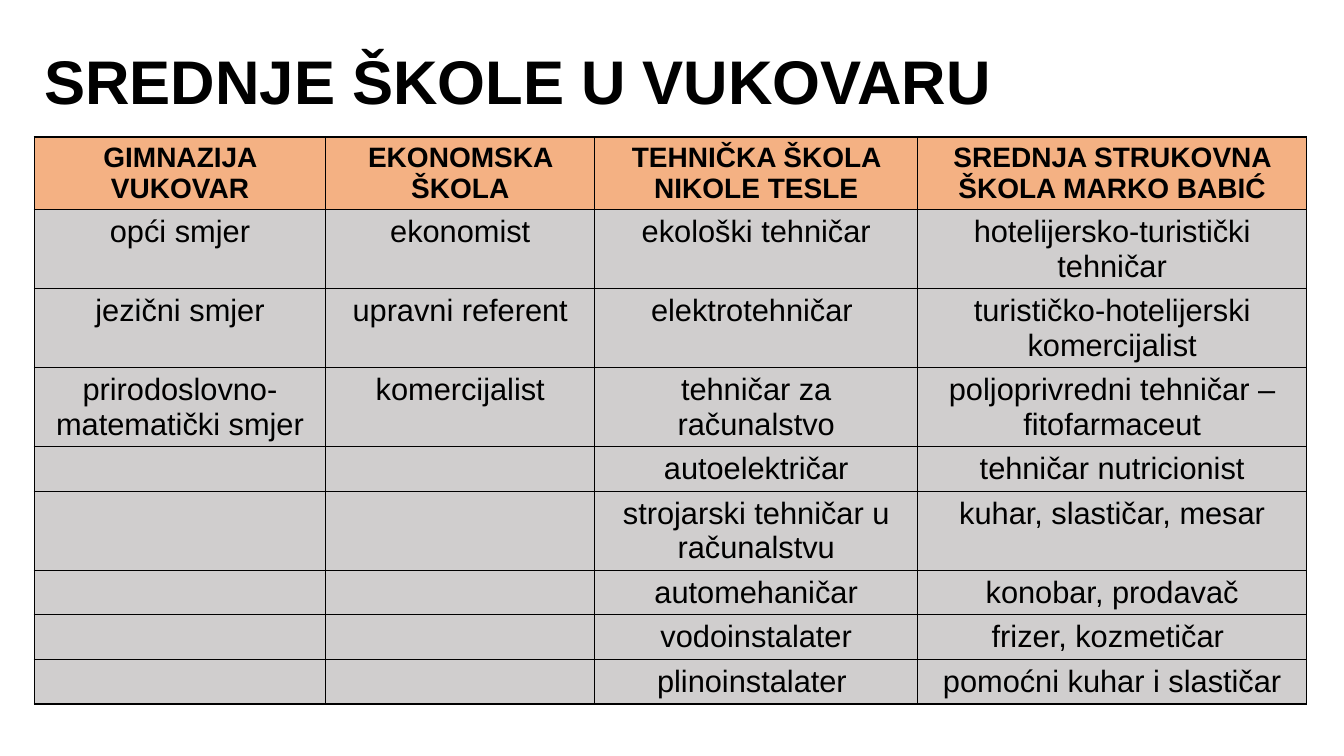
import pptx
import pptx.dml.color
import pptx.enum.text
import pptx.oxml
import pptx.oxml.ns
import pptx.util

PAGE_WIDTH = pptx.util.Inches(13.333)
PAGE_HEIGHT = pptx.util.Inches(7.5)
LEFT = 2.55
COLUMN_SHARES = [21.68, 20.03, 24.01, 28.96]
HEADER_SHARE, DOUBLE_SHARE, SINGLE_SHARE = 9.5, 10.4, 5.87
BLACK, ORANGE, GREY = "000000", "F4B183", "D0CECE"

SCHOOLS = {
    "GIMNAZIJA VUKOVAR": [
        "opći smjer", "jezični smjer", "prirodoslovno-matematički smjer"],
    "EKONOMSKA ŠKOLA": ["ekonomist", "upravni referent", "komercijalist"],
    "TEHNIČKA ŠKOLA NIKOLE TESLE": [
        "ekološki tehničar", "elektrotehničar ", "tehničar za računalstvo",
        "autoelektričar", "strojarski tehničar u računalstvu",
        "automehaničar", "vodoinstalater", "plinoinstalater "],
    "SREDNJA STRUKOVNA ŠKOLA MARKO BABIĆ": [
        "hotelijersko-turistički tehničar",
        "turističko-hotelijerski komercijalist",
        "poljoprivredni tehničar – fitofarmaceut",
        "tehničar nutricionist", "kuhar, slastičar, mesar",
        "konobar, prodavač", "frizer, kozmetičar ",
        "pomoćni kuhar i slastičar"],
}
DOUBLE_ROWS = {1, 2, 3, 5}


def across(percent):
    """Return a share of the page width."""
    return round(PAGE_WIDTH * percent / 100)


def down(percent):
    """Return a share of the page height."""
    return round(PAGE_HEIGHT * percent / 100)


def color(value):
    """Turn a hex string into a colour."""
    return pptx.dml.color.RGBColor.from_string(value)


def write(frame, text, size, bold, align):
    """Write one formatted run into the first paragraph of a text frame."""
    para = frame.paragraphs[0]
    para.alignment = align
    span = para.add_run()
    span.text = text
    span.font.name = "Arial"
    span.font.size = pptx.util.Pt(size)
    span.font.bold = bold
    span.font.color.rgb = color(BLACK)


def add_borders(cell):
    """Give a cell thin black lines on all four sides."""
    properties = cell._tc.get_or_add_tcPr()
    for side in ("lnL", "lnR", "lnT", "lnB"):
        properties.append(pptx.oxml.parse_xml(
            f'<a:{side} {pptx.oxml.ns.nsdecls("a")} w="12700"><a:solidFill>'
            f'<a:srgbClr val="{BLACK}"/></a:solidFill></a:{side}>'))


def fill_cell(cell, text, size, bold, background):
    """Set the borders, background and centred text of a cell."""
    add_borders(cell)
    cell.fill.solid()
    cell.fill.fore_color.rgb = color(background)
    if text:
        write(cell.text_frame, text, size, bold,
              pptx.enum.text.PP_ALIGN.CENTER)


def add_title(page, text):
    """Place and format the title placeholder."""
    box = page.shapes.title
    box.left, box.top = across(LEFT), down(0.93)
    box.width, box.height = across(86.27), down(19.33)
    box.text_frame.word_wrap = True
    box.text_frame.vertical_anchor = pptx.enum.text.MSO_ANCHOR.MIDDLE
    write(box.text_frame, text, 44, True, pptx.enum.text.PP_ALIGN.LEFT)


def add_school_table(page, schools):
    """Add a table with one column of programmes for each school."""
    longest = max(len(programmes) for programmes in schools.values())
    row_shares = [HEADER_SHARE] + [
        DOUBLE_SHARE if row in DOUBLE_ROWS else SINGLE_SHARE
        for row in range(1, longest + 1)]
    table = page.shapes.add_table(
        longest + 1, len(schools), across(LEFT), down(18.13),
        across(sum(COLUMN_SHARES)), down(sum(row_shares))).table
    for column, share in zip(table.columns, COLUMN_SHARES):
        column.width = across(share)
    for row, share in zip(table.rows, row_shares):
        row.height = down(share)
    for column, (school, programmes) in enumerate(schools.items()):
        fill_cell(table.cell(0, column), school, 20, True, ORANGE)
        for row in range(longest):
            text = programmes[row] if row < len(programmes) else ""
            fill_cell(table.cell(row + 1, column), text, 22, False, GREY)


def main():
    """Build and save the deck."""
    deck = pptx.Presentation()
    deck.slide_width, deck.slide_height = PAGE_WIDTH, PAGE_HEIGHT
    page = deck.slides.add_slide(deck.slide_layouts[5])
    add_title(page, "SREDNJE ŠKOLE U VUKOVARU")
    add_school_table(page, SCHOOLS)
    deck.save("out.pptx")


if __name__ == "__main__":
    main()
